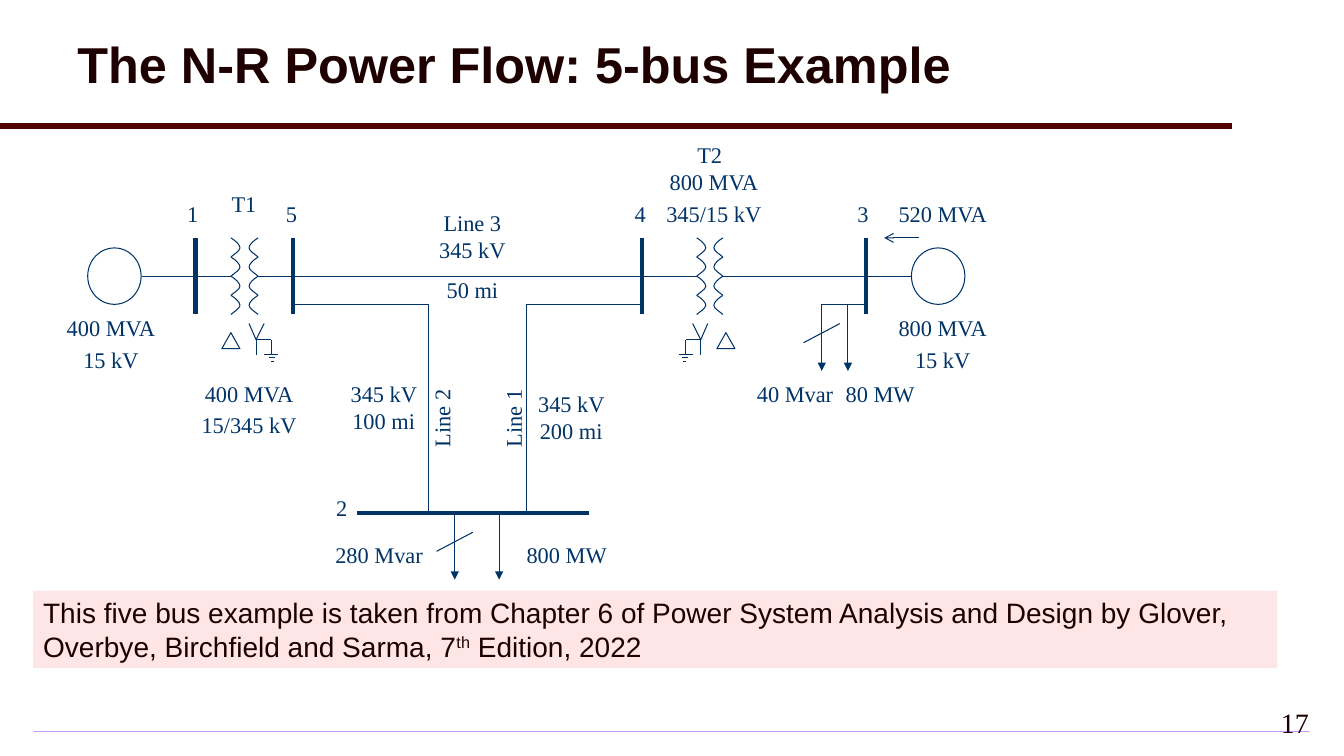
from lxml.etree import SubElement
from pptx import Presentation
from pptx.dml.color import RGBColor
from pptx.enum.shapes import MSO_CONNECTOR, MSO_SHAPE
from pptx.enum.text import MSO_ANCHOR, PP_ALIGN
from pptx.oxml.ns import qn
from pptx.util import Inches, Pt

NAVY, MAROON, DARK, PINK = "003366", "500000", "1E0000", "FFE6E6"
RULE_COLORS = ("CC99FF", "F3EBFF")
SERIF, SANS = "Times New Roman", "Arial"

TITLE = "The N-R Power Flow: 5-bus Example"
NOTE = [
    "This five bus example is taken from Chapter 6 of Power System Analysis and Design by Glover, "
    "Overbye, Birchfield and Sarma, 7",
    "th",
    " Edition, 2022",
]
PAGE_NUMBER = "17"

MAIN_Y, BRANCH_Y, BUS_2_Y = 2.74, 3.02, 5.09
BUS_TOP, BUS_BOTTOM = 2.36, 3.12
BUS_X = [1.94, 2.91, 6.37, 8.59]
GENERATOR_X = [0.87, 9.04]
GENERATOR_SIZE = (0.53, 0.56)

# Stretches of the main conductor, left to right
MAIN_STRETCHES = [(1.41, 1.94), (1.94, 2.29), (2.56, 2.91), (2.91, 6.46),
                  (6.46, 6.91), (7.17, 8.59), (8.59, 9.04)]
BRANCHES = [
    (2.91, BRANCH_Y, 4.25, BRANCH_Y), (4.25, BRANCH_Y, 4.25, BUS_2_Y),
    (5.22, BRANCH_Y, 6.37, BRANCH_Y), (5.22, BRANCH_Y, 5.22, BUS_2_Y),
    (8.15, BRANCH_Y, 8.59, BRANCH_Y),
]
# Load arrows (x, top) and the slash across each reactive load (x, top)
LOADS = [(4.95, BUS_2_Y), (4.51, BUS_2_Y), (8.15, BRANCH_Y), (8.41, BRANCH_Y)]
REACTIVE_LOADS = [(4.51, BUS_2_Y), (8.15, BRANCH_Y)]
LOAD_LENGTH = 0.66

# Winding x and the side it bulges to
WINDINGS = [(2.29, 1), (2.56, -1), (6.91, 1), (7.17, -1)]
LOOP_HEIGHT, LOOPS = 0.19, 4
# Start of a loop, then two control points and an end point for each curve
LOOP_POINTS = [(0, 0), (0.05, 0.03), (0.09, 0.07), (0.09, 0.1),
               (0.09, 0.13), (0.02, 0.17), (0, 0.19)]

# Wye centre x and the side its ground is on; the delta is on the other side
WYES = [(2.54, 1), (6.95, -1)]
DELTA_OFFSET, DELTA_SIZE = 0.25, (0.18, 0.16)
WYE_STROKES = [
    (-0.07, 3.21, 0, 3.37), (0, 3.37, 0.08, 3.21), (0, 3.37, 0, 3.52),
    (0, 3.37, 0.15, 3.37), (0.15, 3.37, 0.15, 3.52),
    (0.08, 3.52, 0.22, 3.52), (0.13, 3.55, 0.19, 3.55), (0.15, 3.59, 0.18, 3.59),
]

# Text, left, top, width, height, rotation
LABELS = [
    ("400 MVA\n15 kV", 0.61, 3.12, 0.98, 0.6, 0),
    ("400 MVA\n15/345 kV", 1.94, 3.77, 1.06, 0.6, 0),
    ("T1", 2.29, 1.89, 0.26, 0.3, 0),
    ("T2", 6.91, 1.4, 0.26, 0.3, 0),
    ("800 MVA\n345/15 kV", 6.55, 1.67, 1.06, 0.6, 0),
    ("800 MVA\n15 kV", 8.86, 3.12, 0.98, 0.6, 0),
    ("520 MVA", 8.86, 1.99, 0.98, 0.3, 0),
    ("80 MW", 8.33, 3.77, 0.8, 0.3, 0),
    ("40 Mvar", 7.44, 3.77, 0.89, 0.3, 0),
    ("280 Mvar", 3.27, 5.37, 0.98, 0.3, 0),
    ("800 MW", 5.13, 5.37, 0.98, 0.3, 0),
    ("Line 3 345 kV", 4.33, 2.08, 0.71, 0.6, 0),
    ("50 mi", 4.33, 2.74, 0.71, 0.3, 0),
    ("Line 2", 4.01, 4.01, 0.75, 0.28, 270),
    ("Line 1", 4.72, 4.01, 0.75, 0.28, 270),
    ("345 kV 100 mi", 3.45, 3.77, 0.71, 0.6, 0),
    ("345 kV 200 mi", 5.31, 3.87, 0.71, 0.6, 0),
    ("1", 1.85, 1.99, 0.12, 0.3, 0),
    ("5", 2.83, 1.99, 0.12, 0.3, 0),
    ("4", 6.29, 1.99, 0.12, 0.3, 0),
    ("3", 8.5, 1.99, 0.12, 0.3, 0),
    ("2", 3.33, 4.9, 0.12, 0.3, 0),
]

deck = Presentation()
deck.slide_width, deck.slide_height = Inches(13.33), Inches(7.5)
page = deck.slides.add_slide(deck.slide_layouts[6])


def color(value):
    return RGBColor.from_string(value)


def outline(shape):
    shape.shadow.inherit = False
    shape.fill.background()
    shape.line.color.rgb = color(NAVY)
    shape.line.width = Pt(0.75)


def add_line(x1, y1, x2, y2, width=0.75, line_color=NAVY, arrow=None):
    line = page.shapes.add_connector(
        MSO_CONNECTOR.STRAIGHT, Inches(x1), Inches(y1), Inches(x2), Inches(y2))
    line.line.color.rgb = color(line_color)
    line.line.width = Pt(width)
    if arrow:
        SubElement(line.line._get_or_add_ln(), qn("a:tailEnd"), type=arrow)
    SubElement(line._element.spPr, qn("a:effectLst"))


def add_preset(kind, left, top, width, height):
    shape = page.shapes.add_shape(
        kind, Inches(left), Inches(top), Inches(width), Inches(height))
    outline(shape)
    return shape


def style(paragraph, size, font, text_color, bold=False):
    for span in paragraph.runs:
        span.font.size, span.font.name, span.font.bold = Pt(size), font, bold
        span.font.color.rgb = color(text_color)


def add_text(text, left, top, width, height, size, font, text_color, align, bold=False):
    box = page.shapes.add_textbox(Inches(left), Inches(top), Inches(width), Inches(height))
    frame = box.text_frame
    frame.word_wrap = True
    frame.vertical_anchor = MSO_ANCHOR.MIDDLE
    for index, part in enumerate(text.split("\n")):
        para = frame.add_paragraph() if index else frame.paragraphs[0]
        para.text = part
        para.alignment = align
        if index:
            para.space_before = Pt(size * 0.2)
        style(para, size, font, text_color, bold)
    return box


def add_loop(x, top, side):
    """Draw one half-turn of a winding, as two Bezier curves."""
    points = [(Inches(x + side * dx), Inches(top + dy)) for dx, dy in LOOP_POINTS]
    builder = page.shapes.build_freeform(*points[0])
    builder.add_line_segments(points[1:], close=False)
    loop = builder.convert_to_shape()
    outline(loop)
    segments = list(loop._element.iter(qn("a:lnTo")))
    track = segments[0].getparent()
    for first in range(0, len(segments), 3):
        curve = SubElement(track, qn("a:cubicBezTo"))
        for segment in segments[first:first + 3]:
            curve.append(segment[0])
            track.remove(segment)


rule = add_preset(MSO_SHAPE.RECTANGLE, 0.33, 7.25, 12.66, 0.01)
rule.line.fill.background()
rule.fill.gradient()
for stop, stop_color in zip(rule.fill.gradient_stops, RULE_COLORS):
    stop.color.rgb = color(stop_color)
gradient = rule._element.spPr.find(qn("a:gradFill"))
gradient.remove(gradient.find(qn("a:lin")))
spread = SubElement(gradient, qn("a:path"), {"path": "shape"})
SubElement(spread, qn("a:fillToRect"), dict.fromkeys("ltrb", "50000"))

add_line(0, 1.25, 12.22, 1.25, 4, MAROON)
title = add_text(TITLE, 0.67, 0.08, 12.22, 1.17, 36, SANS, DARK, PP_ALIGN.LEFT, True)
title.text_frame.paragraphs[0].line_spacing = 0.9

for x in GENERATOR_X:
    add_preset(MSO_SHAPE.OVAL, x, MAIN_Y - GENERATOR_SIZE[1] / 2, *GENERATOR_SIZE)
for start, end in MAIN_STRETCHES:
    add_line(start, MAIN_Y, end, MAIN_Y)
for branch in BRANCHES:
    add_line(*branch)
for x, top in LOADS:
    add_line(x, top, x, top + LOAD_LENGTH, arrow="triangle")
for x, top in REACTIVE_LOADS:
    add_line(x - 0.18, top + 0.38, x + 0.18, top + 0.19)
add_line(9.12, BUS_TOP, 8.77, BUS_TOP, arrow="arrow")

for x, side in WINDINGS:
    for loop_index in range(LOOPS):
        add_loop(x, BUS_TOP + loop_index * LOOP_HEIGHT, side)
for x, side in WYES:
    delta_left = x - side * DELTA_OFFSET - DELTA_SIZE[0] / 2
    add_preset(MSO_SHAPE.ISOSCELES_TRIANGLE, delta_left, 3.3, *DELTA_SIZE)
    for x1, y1, x2, y2 in WYE_STROKES:
        add_line(x + side * x1, y1, x + side * x2, y2)

for x in BUS_X:
    add_line(x, BUS_TOP, x, BUS_BOTTOM, 3)
add_line(3.54, BUS_2_Y, 5.84, BUS_2_Y, 3)

for text, left, top, width, height, rotation in LABELS:
    label = add_text(text, left, top, width, height, 16, SERIF, NAVY, PP_ALIGN.CENTER)
    label.rotation = rotation
    frame = label.text_frame
    frame.vertical_anchor = MSO_ANCHOR.TOP
    frame.margin_left = frame.margin_right = frame.margin_top = frame.margin_bottom = 0

note = add_text("", 0.33, 5.86, 12.34, 0.77, 20, SANS, DARK, PP_ALIGN.LEFT)
note.fill.solid()
note.fill.fore_color.rgb = color(PINK)
note.text_frame.vertical_anchor = MSO_ANCHOR.TOP
note_para = note.text_frame.paragraphs[0]
for part in NOTE:
    note_para.add_run().text = part
style(note_para, 20, SANS, DARK)
note_para.runs[1].font._element.set("baseline", "30000")

add_text(PAGE_NUMBER, 11, 6.92, 2.08, 0.5, 20, SERIF, DARK, PP_ALIGN.RIGHT)

deck.save("out.pptx")
